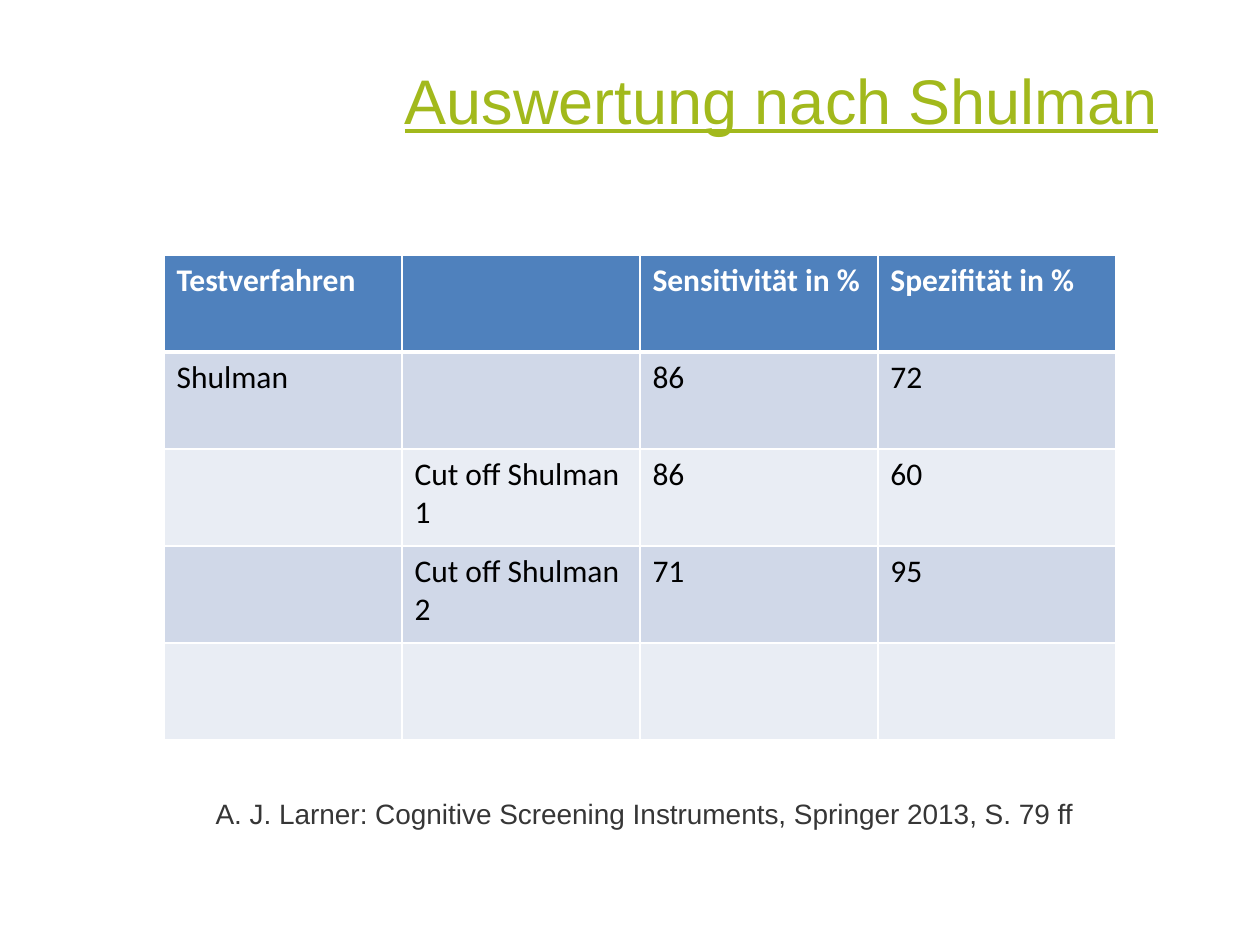
import pptx
import pptx.util
import pptx.dml.color
import pptx.enum.text
from lxml import etree

RGBColor = pptx.dml.color.RGBColor
GREEN = RGBColor(0xA2, 0xB9, 0x1C)
GREY = RGBColor(0x36, 0x36, 0x36)
WHITE = RGBColor(0xFF, 0xFF, 0xFF)
BLACK = RGBColor(0x00, 0x00, 0x00)
HEADER_BLUE = RGBColor(0x4F, 0x81, 0xBD)
BANDS = [RGBColor(0xE9, 0xED, 0xF4), RGBColor(0xD0, 0xD8, 0xE8)]

EMU_PER_PX = 914400 / 126
DRAWING = "{http://schemas.openxmlformats.org/drawingml/2006/main}"


def px(length):
    return pptx.util.Emu(round(length * EMU_PER_PX))


def write(frame, text, formats):
    run = frame.paragraphs[0].add_run()
    run.text = text
    for key, value in formats.items():
        if key == "color":
            run.font.color.rgb = value
        else:
            setattr(run.font, key, value)


deck = pptx.Presentation()
deck.slide_width = px(1260)
deck.slide_height = px(945)
slide = deck.slides.add_slide(deck.slide_layouts[1])

heading = slide.shapes.title
citation = slide.placeholders[1]
places = [
    (heading, {"left": 372, "top": 49, "width": 819, "height": 100}),
    (citation, {"left": 203, "top": 790, "width": 988, "height": 53}),
]
for placeholder, place in places:
    for side, length in place.items():
        setattr(placeholder, side, px(length))
    placeholder.text_frame.auto_size = pptx.enum.text.MSO_AUTO_SIZE.NONE

heading.text_frame.vertical_anchor = pptx.enum.text.MSO_ANCHOR.MIDDLE
heading.text_frame.paragraphs[0].alignment = pptx.enum.text.PP_ALIGN.CENTER
write(heading.text_frame, "Auswertung nach Shulman",
      {"name": "Arial", "size": pptx.util.Pt(36), "underline": True, "color": GREEN})

citation_line = citation.text_frame.paragraphs[0]
citation_line.space_before = pptx.util.Pt(0)
citation_format = citation_line._p.get_or_add_pPr()
citation_format.set("marL", "0")
citation_format.set("indent", "0")
etree.SubElement(citation_format, DRAWING + "buNone")
write(citation.text_frame,
      "A. J. Larner: Cognitive Screening Instruments, Springer 2013, S. 79 ff",
      {"name": "Arial", "size": pptx.util.Pt(16), "color": GREY})

results = [
    ["Testverfahren", "", "Sensitivität in %", "Spezifität in %"],
    ["Shulman", "", "86", "72"],
    ["", "Cut off Shulman 1", "86", "60"],
    ["", "Cut off Shulman 2", "71", "95"],
    ["", "", "", ""],
]
table = slide.shapes.add_table(
    len(results), len(results[0]), px(164), px(255), px(952), px(485)).table
for column in table.columns:
    column.width = px(238)
for row in table.rows:
    row.height = px(97)

for row_index, values in enumerate(results):
    is_header = row_index == 0
    for column_index, value in enumerate(values):
        cell = table.cell(row_index, column_index)
        cell_format = cell._tc.get_or_add_tcPr()
        borders = {"lnL": 1, "lnR": 1,
                   "lnT": 3 if row_index == 1 else 1,
                   "lnB": 3 if is_header else 1}
        for edge, points in borders.items():
            line = etree.SubElement(cell_format, DRAWING + edge, w=str(pptx.util.Pt(points)))
            paint = etree.SubElement(line, DRAWING + "solidFill")
            etree.SubElement(paint, DRAWING + "srgbClr", val=str(WHITE))
        cell.fill.solid()
        cell.fill.fore_color.rgb = HEADER_BLUE if is_header else BANDS[row_index % 2]
        if value:
            write(cell.text_frame, value,
                  {"name": "Calibri", "size": pptx.util.Pt(18), "bold": is_header,
                   "color": WHITE if is_header else BLACK})

deck.save("out.pptx")
